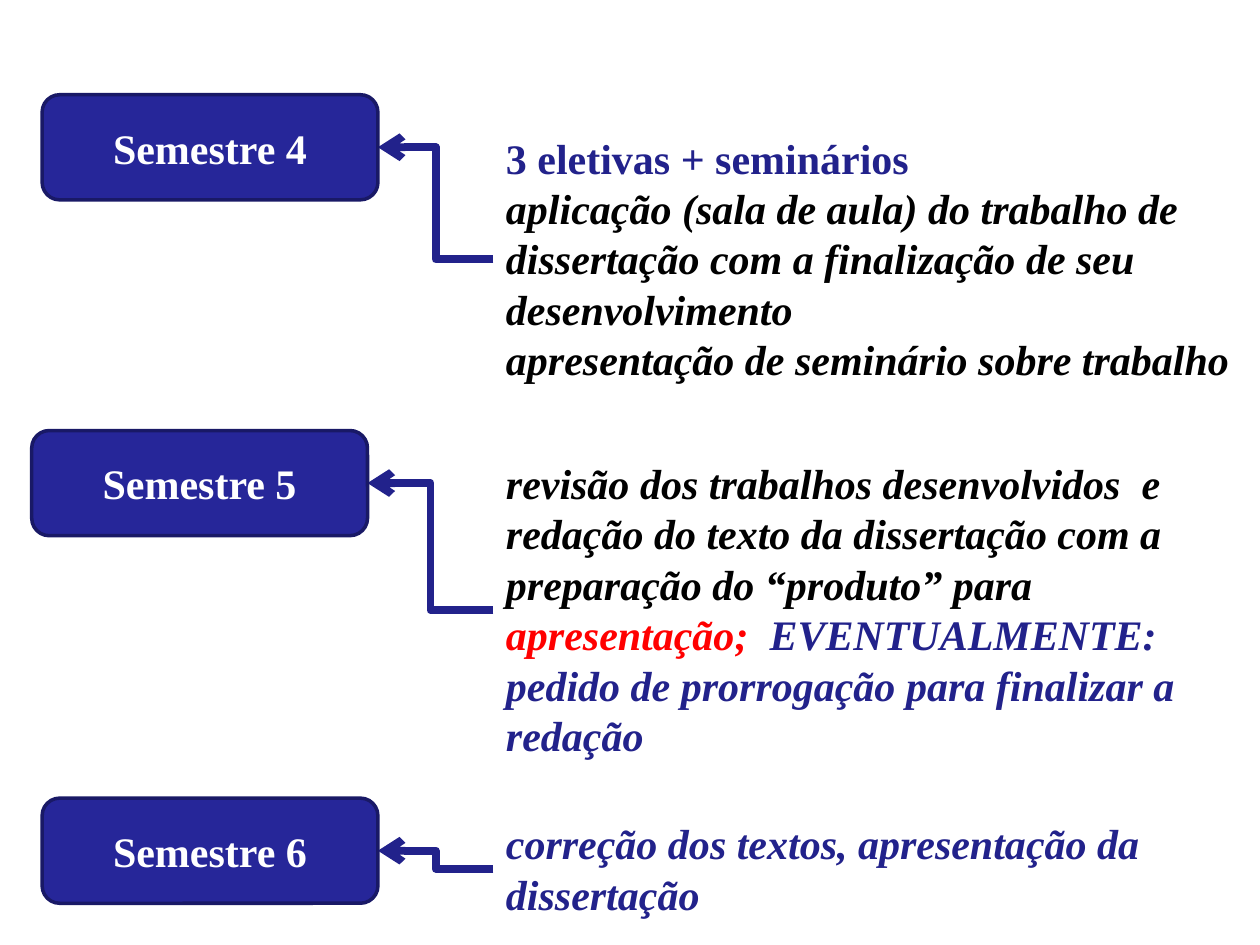
"""Build a slide that sets out the work of semesters 4 to 6."""
from dataclasses import dataclass

from lxml.etree import SubElement
from pptx import Presentation
from pptx.dml.color import RGBColor
from pptx.enum.shapes import MSO_CONNECTOR, MSO_SHAPE
from pptx.enum.text import MSO_ANCHOR, MSO_AUTO_SIZE, PP_ALIGN
from pptx.oxml.ns import qn
from pptx.util import Cm, Pt


@dataclass(frozen=True)
class Theme:
    font: str = "Times New Roman"
    size: float = 24
    box_fill: str = "262699"
    box_edge: str = "191966"
    edge_width: float = 2
    arrow_width: float = 4.5
    blue: str = "22228B"
    black: str = "000000"
    red: str = "FF0000"
    white: str = "FFFFFF"


THEME = Theme()
BOX_WIDTH, BOX_HEIGHT = 6.77, 2.12
TEXT_LEFT = 9.95

SEMESTERS = [
    {
        "label": "Semestre 4",
        "box": (0.85, 1.91),
        "text": (2.54, 15.45, 5.38),
        "paragraphs": [
            [("3 eletivas + seminários", THEME.blue, False)],
            [("aplicação (sala de aula) do trabalho de dissertação com a "
              "finalização de seu desenvolvimento", THEME.black, True)],
            [("apresentação de seminário sobre trabalho", THEME.black, True)],
        ],
    },
    {
        "label": "Semestre 5",
        "box": (0.64, 8.68),
        "text": (9.1, 15.45, 6.4),
        "paragraphs": [
            [("revisão dos trabalhos desenvolvidos  e redação do texto da dissertação "
              "com a preparação do “produto” para ", THEME.black, True),
             ("apresentação;  ", THEME.red, True),
             ("EVENTUALMENTE: pedido de prorrogação para finalizar a redação",
              THEME.blue, True)],
        ],
    },
    {
        "label": "Semestre 6",
        "box": (0.85, 16.09),
        "text": (16.36, 14.82, 2.31),
        "paragraphs": [
            [("correção dos textos, apresentação da dissertação", THEME.blue, True)],
        ],
    },
]


def style(span, color, italic=False):
    """Give a run the theme font in one colour."""
    span.font.name = THEME.font
    span.font.size = Pt(THEME.size)
    span.font.bold = True
    span.font.italic = italic
    span.font.color.rgb = RGBColor.from_string(color)


def add_label(page, label, left, top):
    """Add the rounded box that names a semester."""
    box = page.shapes.add_shape(MSO_SHAPE.ROUNDED_RECTANGLE, Cm(left), Cm(top),
                                Cm(BOX_WIDTH), Cm(BOX_HEIGHT))
    box.shadow.inherit = False
    box.fill.solid()
    box.fill.fore_color.rgb = RGBColor.from_string(THEME.box_fill)
    box.line.color.rgb = RGBColor.from_string(THEME.box_edge)
    box.line.width = Pt(THEME.edge_width)
    box.text_frame.text = label
    box.text_frame.vertical_anchor = MSO_ANCHOR.MIDDLE
    paragraph = box.text_frame.paragraphs[0]
    paragraph.alignment = PP_ALIGN.CENTER
    style(paragraph.runs[0], THEME.white)


def add_description(page, paragraphs, top, width, height):
    """Add the text that describes a semester."""
    box = page.shapes.add_textbox(Cm(TEXT_LEFT), Cm(top), Cm(width), Cm(height))
    frame = box.text_frame
    frame.word_wrap = True
    frame.auto_size = MSO_AUTO_SIZE.SHAPE_TO_FIT_TEXT
    for index, spans in enumerate(paragraphs):
        paragraph = frame.add_paragraph() if index else frame.paragraphs[0]
        for text, color, italic in spans:
            span = paragraph.add_run()
            span.text = text
            style(span, color, italic)


def add_arrow(page, start, end):
    """Add an elbow arrow from a description to its semester."""
    arrow = page.shapes.add_connector(MSO_CONNECTOR.ELBOW, *map(Cm, start + end))
    arrow.line.color.rgb = RGBColor.from_string(THEME.blue)
    arrow.line.width = Pt(THEME.arrow_width)
    SubElement(arrow.line._get_or_add_ln(), qn("a:tailEnd"), type="arrow")
    SubElement(arrow._element.spPr, qn("a:effectLst"))


def main():
    """Lay out the semesters and save the deck."""
    deck = Presentation()
    deck.slide_width, deck.slide_height = Cm(25.4), Cm(19.05)
    page = deck.slides.add_slide(deck.slide_layouts[6])
    for semester in SEMESTERS:
        left, top = semester["box"]
        text_top, text_width, text_height = semester["text"]
        add_arrow(page, (TEXT_LEFT, text_top + text_height / 2),
                  (left + BOX_WIDTH, top + BOX_HEIGHT / 2))
        add_label(page, semester["label"], left, top)
        add_description(page, semester["paragraphs"], text_top, text_width, text_height)
    deck.save("out.pptx")


if __name__ == "__main__":
    main()
